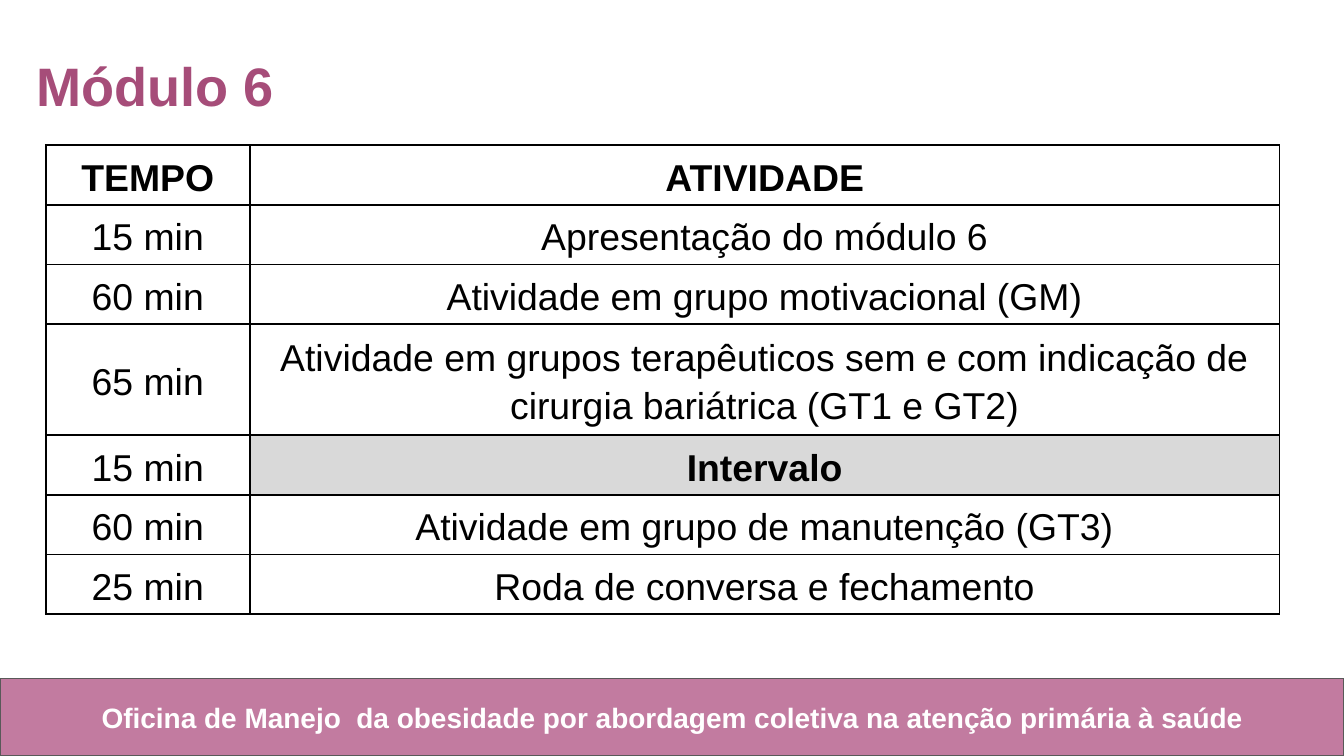
from dataclasses import dataclass
from typing import Any

from pptx import Presentation
from pptx.dml.color import RGBColor
from pptx.enum.shapes import MSO_SHAPE as Preset
from pptx.enum.text import MSO_ANCHOR as Anchor, PP_ALIGN as Align
from pptx.oxml import parse_xml
from pptx.oxml.ns import nsdecls
from pptx.util import Inches, Pt

WIDTH = 10
HEIGHT = WIDTH * 9 / 16
COLUMNS = (1.52, 7.66)
LINE_HEIGHT, ROW_PADDING = 0.2, 0.05
BLACK, WHITE, GRAY = "000000", "FFFFFF", "D9D9D9"
PLUM, PINK, OUTLINE = "A64D79", "C27BA0", "595959"
MARGINS = ("margin_left", "margin_top", "margin_right", "margin_bottom")


@dataclass(frozen=True)
class Style:
    size: float
    color: str
    bold: bool = False
    align: Any = Align.CENTER
    spacing: float = 1.15


@dataclass(frozen=True)
class Activity:
    time: str
    name: str
    lines: int = 1
    bold: bool = False
    heading: bool = False
    fill: str = WHITE


ACTIVITIES = (
    Activity("TEMPO", "ATIVIDADE", bold=True, heading=True),
    Activity("15 min", "Apresentação do módulo 6"),
    Activity("60 min", "Atividade em grupo motivacional (GM)"),
    Activity("65 min", "Atividade em grupos terapêuticos sem e com indicação de "
                       "cirurgia bariátrica (GT1 e GT2)", lines=2),
    Activity("15 min", "Intervalo", bold=True, fill=GRAY),
    Activity("60 min", "Atividade em grupo de manutenção (GT3)"),
    Activity("25 min", "Roda de conversa e fechamento"),
)


def color(value: str) -> RGBColor:
    return RGBColor.from_string(value)


def apply(target: Any, values: dict[str, Any]) -> None:
    for name, value in values.items():
        setattr(target, name, value)


def paint(target: Any, value: str) -> None:
    target.fill.solid()
    target.fill.fore_color.rgb = color(value)


def write(frame: Any, text: str, style: Style) -> None:
    para = frame.paragraphs[0]
    apply(para, {"alignment": style.align, "line_spacing": style.spacing})
    span = para.add_run()
    span.text = text
    apply(span.font, {"name": "Arial", "size": Pt(style.size), "bold": style.bold})
    span.font.color.rgb = color(style.color)


def add_text(page: Any, place: tuple[float, ...], text: str, style: Style) -> None:
    box = page.shapes.add_textbox(*map(Inches, place))
    apply(box.text_frame, dict.fromkeys(MARGINS, Inches(0.1)) | {"word_wrap": True})
    write(box.text_frame, text, style)


def add_borders(cell: Any) -> None:
    properties = cell._tc.get_or_add_tcPr()
    for side in "LRTB":
        properties.append(parse_xml(
            f'<a:ln{side} {nsdecls("a")} w="{Pt(1)}"><a:solidFill>'
            f'<a:srgbClr val="{BLACK}"/></a:solidFill></a:ln{side}>'))


def fill_cell(cell: Any, text: str, bold: bool, fill: str) -> None:
    apply(cell, dict.fromkeys(MARGINS, Inches(0.03)) | {"vertical_anchor": Anchor.MIDDLE})
    add_borders(cell)
    paint(cell, fill)
    write(cell.text_frame, text, Style(20, BLACK, bold))


def add_schedule(page: Any, left: float, top: float) -> None:
    heights = [item.lines * LINE_HEIGHT + ROW_PADDING for item in ACTIVITIES]
    place = map(Inches, (left, top, sum(COLUMNS), sum(heights)))
    table = page.shapes.add_table(len(ACTIVITIES), len(COLUMNS), *place).table
    apply(table, {"first_row": False, "horz_banding": False})
    for column, width in zip(table.columns, COLUMNS):
        column.width = Inches(width)
    for row, height, item in zip(table.rows, heights, ACTIVITIES):
        row.height = Inches(height)
        fill_cell(row.cells[0], item.time, item.heading, WHITE)
        fill_cell(row.cells[1], item.name, item.bold, item.fill)


def add_footer(page: Any, text: str) -> None:
    top = 5.05
    place = map(Inches, (0, top, WIDTH, HEIGHT - top))
    band = page.shapes.add_shape(Preset.RECTANGLE, *place)
    band.shadow.inherit = False
    paint(band, PINK)
    band.line.color.rgb = color(OUTLINE)
    band.line.width = Pt(0.75)
    add_text(page, (0.34, 5.11, 9.33, 0.45), text, Style(15, WHITE, True, spacing=1.0))


def main() -> None:
    deck = Presentation()
    apply(deck, {"slide_width": Inches(WIDTH), "slide_height": Inches(HEIGHT)})
    page = deck.slides.add_slide(deck.slide_layouts[6])
    add_footer(page, "Oficina de Manejo  da obesidade por abordagem coletiva na atenção primária à saúde")
    add_text(page, (0.17, 0.22, 7.57, 0.74), "Módulo 6", Style(29, PLUM, True, Align.LEFT))
    add_schedule(page, 0.34, 1.08)
    deck.save("out.pptx")


if __name__ == "__main__":
    main()
